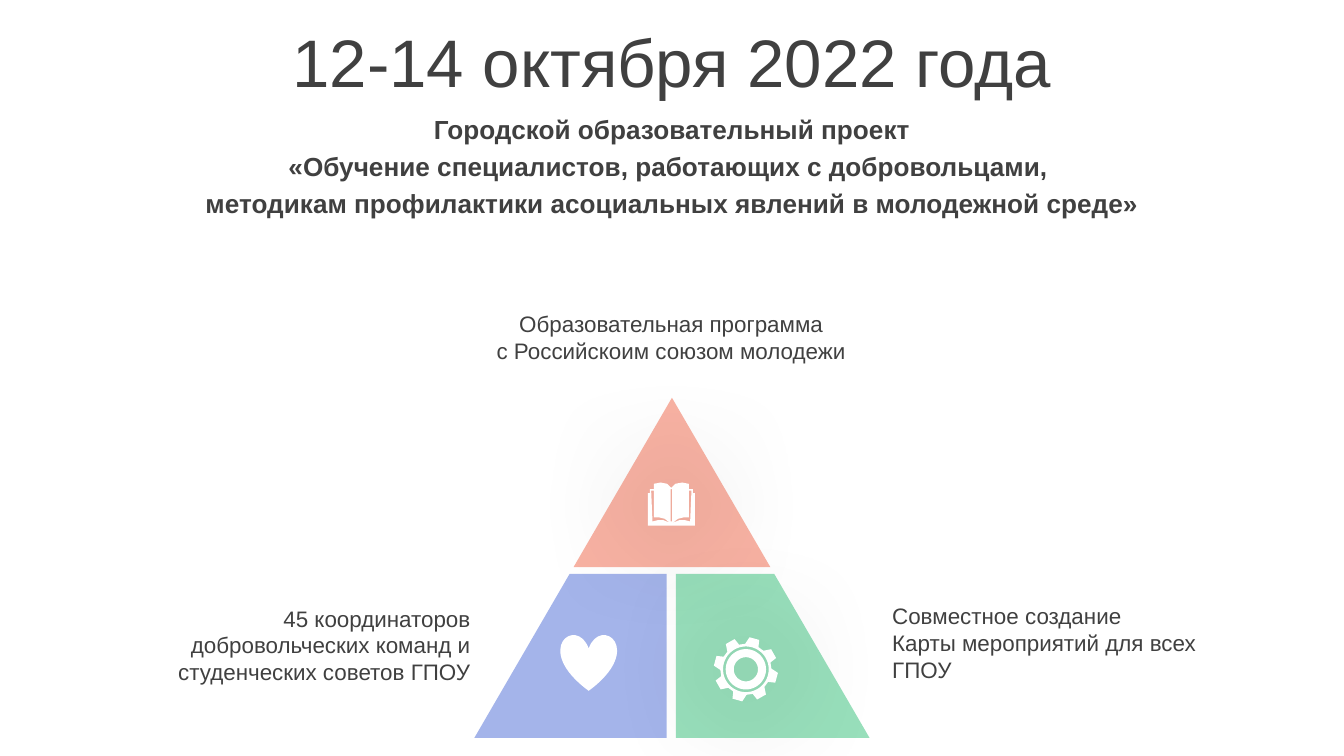
from math import cos, pi, radians, sin

from lxml.etree import SubElement
from pptx import Presentation
from pptx.dml.color import RGBColor
from pptx.enum.shapes import MSO_SHAPE
from pptx.enum.text import MSO_ANCHOR, PP_ALIGN
from pptx.oxml.ns import qn
from pptx.util import Inches, Pt

INK = "404040"
WHITE = "FFFFFF"
CORAL, GREEN, BLUE = "F8B2A3", "98DFBB", "A4B4EA"


def color(value):
    return RGBColor.from_string(value)


def paint(shape, fill):
    shape.shadow.inherit = False
    shape.fill.solid()
    shape.fill.fore_color.rgb = color(fill)
    shape.line.fill.background()


def add_glow(shape):
    effects = shape._element.spPr.find(qn("a:effectLst"))
    shadow = SubElement(effects, qn("a:outerShdw"), blurRad=str(Pt(63)), dist="0",
                        dir="0", algn="ctr", rotWithShape="0")
    black = SubElement(shadow, qn("a:srgbClr"), val="000000")
    SubElement(black, qn("a:alpha"), val="40000")


def add_outline(slide, origin, contours, fill):
    left, top = origin
    placed = [[(Inches(left + x), Inches(top + y)) for x, y in contour]
              for contour in contours]
    builder = slide.shapes.build_freeform(*placed[0][0])
    for number, contour in enumerate(placed):
        if number:
            builder.move_to(*contour[0])
        builder.add_line_segments(contour[1:], close=True)
    outline = builder.convert_to_shape()
    paint(outline, fill)
    return outline


def add_label(slide, box, lines, size, align, bold=False, anchor=MSO_ANCHOR.TOP, gap=0):
    label = slide.shapes.add_textbox(*map(Inches, box))
    frame = label.text_frame
    frame.word_wrap = True
    frame.vertical_anchor = anchor
    frame.text = "\n".join(lines)
    for number, paragraph in enumerate(frame.paragraphs):
        paragraph.alignment = align
        paragraph.space_before = Pt(gap if number else 0)
        for run in paragraph.runs:
            font = run.font
            font.name, font.size, font.bold = "Arial", Pt(size), bold
            font.color.rgb = color(INK)


def add_heading(slide, box):
    left, top, width, height = box
    add_label(slide, (left, top, width, 0.63), ["12-14 октября 2022 года"],
              36, PP_ALIGN.CENTER, anchor=MSO_ANCHOR.MIDDLE)
    add_label(slide, (left, top + height - 0.31, width, 0.31),
              ["Городской образовательный проект",
               "«Обучение специалистов, работающих с добровольцами, ",
               "методикам профилактики асоциальных явлений в молодежной среде»"],
              14, PP_ALIGN.CENTER, bold=True, anchor=MSO_ANCHOR.MIDDLE, gap=2.8)


def add_book(slide, box):
    left, top, width, height = box
    middle = width / 2
    half_cover = [(0, 0.04), (0.03, 0.01), (0.08, 0), (0.13, 0.01), (0.13, 0.05),
                  (0.16, 0.05), (0.16, 0.08), (middle, 0.08), (middle, height)]
    page_edge = [(0.01, 0.3), (0.06, 0.28), (0.1, 0.28), (0.14, 0.29), (0.15, 0.06),
                 (0.13, 0.06), (0.13, 0.26), (0.09, 0.26), (0.05, 0.27)]
    spine = [(-0.005, 0.05), (0.005, 0.05), (0.005, 0.29), (-0.005, 0.29)]

    def mirror(points):
        return [(-x, y) for x, y in reversed(points)]

    contours = [half_cover + mirror(half_cover), page_edge, mirror(page_edge), spine]
    add_glow(add_outline(slide, (left + middle, top), contours, WHITE))


def add_gear(slide, box):
    left, top, width, height = box
    outer, root = width / 2, 0.19

    def polar(radius, degrees):
        return radius * cos(radians(degrees)), radius * sin(radians(degrees))

    teeth = [polar(radius, tooth * 45 - 74.5 + offset)
             for tooth in range(8)
             for radius, offset in ((root, -17), (outer, -9), (outer, 9), (root, 14))]
    rings = [[(radius * cos(step * pi / 30), radius * sin(step * pi / 30))
              for step in range(60)] for radius in (0.17, 0.15, 0.09)]
    center = (left + width / 2, top + height / 2)
    add_glow(add_outline(slide, center, [teeth, *rings], WHITE))


def add_heart(slide, box):
    heart = slide.shapes.add_shape(MSO_SHAPE.HEART, *map(Inches, box))
    paint(heart, WHITE)


def add_pyramid(slide, box):
    left, top, width, height = box
    middle = width / 2
    peak_height, base_top = 1.26, 1.31
    slope = middle / height

    def edge(y):
        return y * slope

    peak = [(middle, 0), (middle + edge(peak_height), peak_height),
            (middle - edge(peak_height), peak_height)]
    right_base = [(middle + 0.03, base_top), (middle + edge(base_top), base_top),
                  (width, height), (middle + 0.03, height)]
    left_base = [(middle - edge(base_top), base_top), (middle - 0.04, base_top),
                 (middle - 0.04, height), (0, height)]
    for part, fill in ((peak, CORAL), (right_base, GREEN), (left_base, BLUE)):
        add_outline(slide, (left, top), [part], fill)
    add_book(slide, (left + 1.29, top + 0.63, 0.35, 0.32))
    add_gear(slide, (left + 1.78, top + 1.78, 0.48, 0.48))
    add_heart(slide, (left + 0.64, top + 1.76, 0.42, 0.42))


def add_captions(slide, box):
    left, top, width, height = box
    label_width = 2.83
    add_label(slide, (left, top + 2.19, label_width, 0.71),
              ["45 координаторов добровольческих команд и студенческих советов ГПОУ"],
              12, PP_ALIGN.RIGHT)
    add_label(slide, (left + width - label_width, top + 2.17, label_width, 0.71),
              ["Совместное создание", "Карты мероприятий для всех ГПОУ"],
              12, PP_ALIGN.LEFT)
    add_label(slide, (left + 2.81, top, label_width, 0.5),
              ["Образовательная программа", "с Российскоим союзом молодежи"],
              12, PP_ALIGN.CENTER)


def main():
    deck = Presentation()
    deck.slide_width = Inches(10)
    deck.slide_height = deck.slide_width * 9 // 16
    slide = deck.slides.add_slide(deck.slide_layouts[6])
    add_heading(slide, (0, 0.14, 10, 1.25))
    add_pyramid(slide, (3.53, 2.96, 2.94, 2.53))
    add_captions(slide, (0.77, 2.26, 8.6, 2.9))
    deck.save("out.pptx")


if __name__ == "__main__":
    main()
